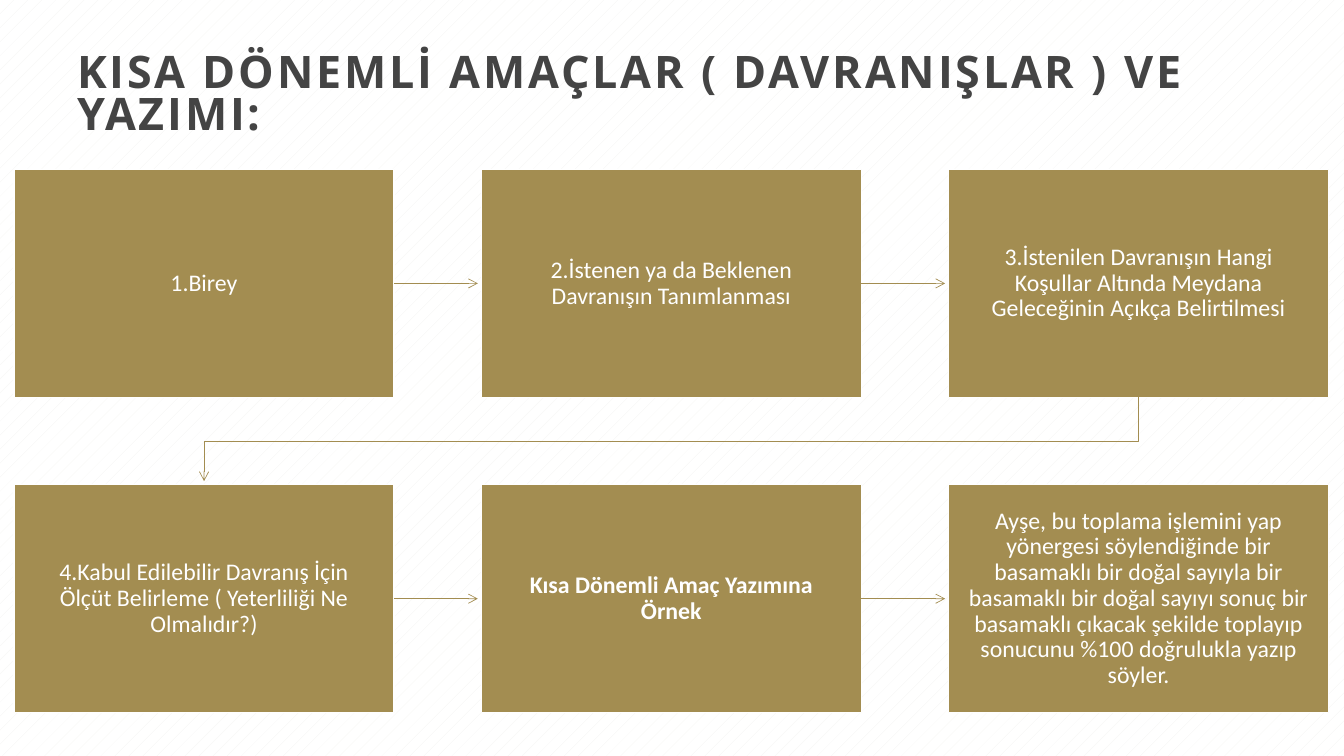
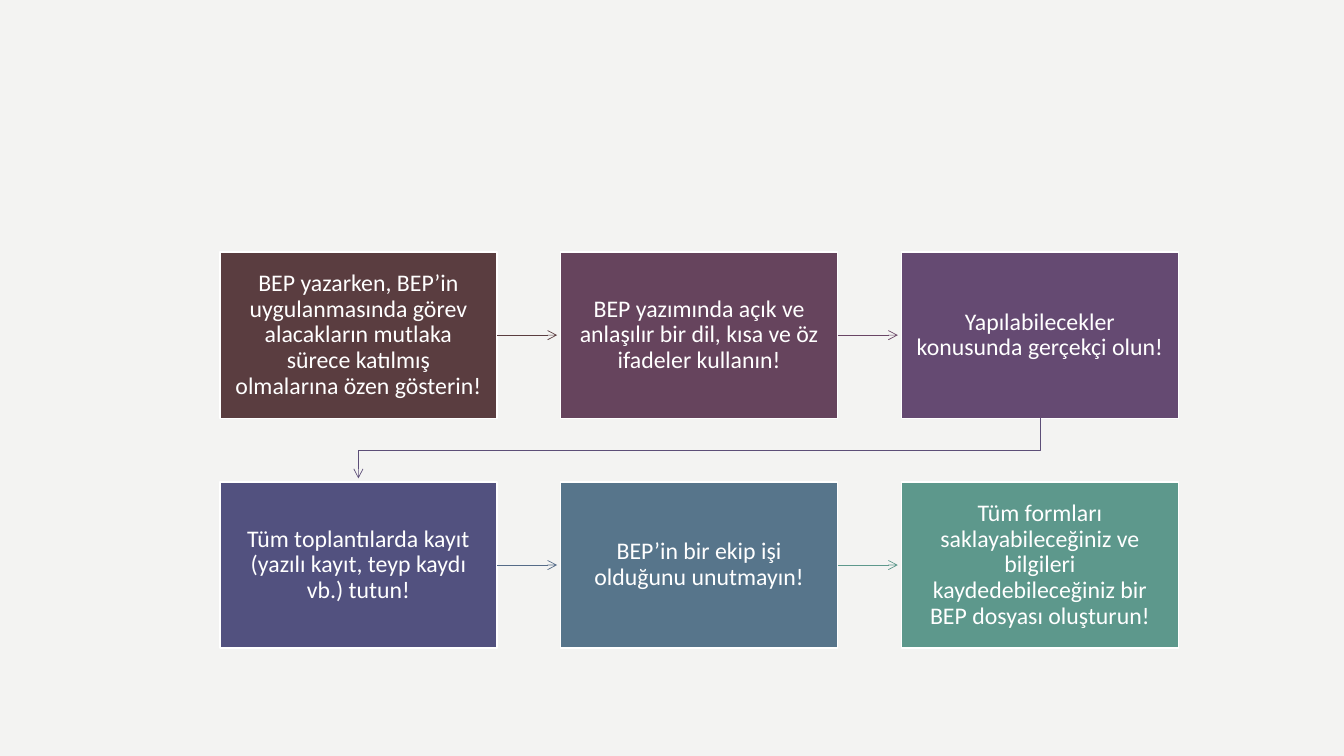
import lxml.etree
import pptx
import pptx.dml.color
import pptx.enum.dml
import pptx.enum.shapes
import pptx.enum.text
import pptx.oxml.ns
import pptx.util

Pt = pptx.util.Pt
RGB = pptx.dml.color.RGBColor
qn = pptx.oxml.ns.qn

# Shared style
WHITE = RGB(0xFF, 0xFF, 0xFF)
PAPER = RGB(0xF3, 0xF3, 0xF2)
TITLE_GREY = RGB(0x44, 0x44, 0x44)
GOLD = RGB(0xA3, 0x8D, 0x51)
BROWN = RGB(0x5A, 0x3D, 0x40)
PLUM = RGB(0x66, 0x44, 0x5D)
MAUVE = RGB(0x69, 0x45, 0x65)
PURPLE = RGB(0x65, 0x4A, 0x72)
VIOLET = RGB(0x5C, 0x4E, 0x78)
INDIGO = RGB(0x52, 0x51, 0x7F)
STEEL = RGB(0x55, 0x6B, 0x88)
SLATE = RGB(0x57, 0x75, 0x8B)
TEAL = RGB(0x5D, 0x98, 0x8C)
TITLE_FONT, BODY_FONT = "Open Sans", "Calibri"
COLUMNS = 3
ARROW_STOP = 2.5  # space between an arrow tip and the next box

# Content: one flow of steps per slide
FLOWS = [
    {
        "title": "KISA DÖNEMLİ AMAÇLAR ( DAVRANIŞLAR ) VE YAZIMI:",
        "patterned": True,
        "left": 10, "top": 121, "width": 271.5, "height": 162.9, "gap": 62.3,
        "insets": (13, 14),
        "steps": [
            "1.Birey",
            "2.İstenen ya da Beklenen Davranışın Tanımlanması",
            "3.İstenilen Davranışın Hangi Koşullar Altında Meydana "
            "Geleceğinin Açıkça Belirtilmesi",
            "4.Kabul Edilebilir Davranış İçin Ölçüt Belirleme "
            "( Yeterliliği Ne Olmalıdır?)",
            "Kısa Dönemli Amaç Yazımına Örnek",
            "Ayşe, bu toplama işlemini yap yönergesi söylendiğinde bir "
            "basamaklı bir doğal sayıyla bir basamaklı bir doğal sayıyı "
            "sonuç bir basamaklı çıkacak şekilde toplayıp sonucunu %100 "
            "doğrulukla yazıp söyler.",
        ],
        "bold_step": 4,
        "fills": [GOLD] * 6,
        "arrows": [GOLD] * 5,
    },
    {
        "title": None,
        "patterned": False,
        "left": 157, "top": 180, "width": 198, "height": 118.8, "gap": 45.4,
        "insets": (9.5, 10),
        "steps": [
            "BEP yazarken, BEP’in uygulanmasında görev alacakların mutlaka "
            "sürece katılmış olmalarına özen gösterin!",
            "BEP yazımında açık ve anlaşılır bir dil, kısa ve öz ifadeler "
            "kullanın!",
            "Yapılabilecekler konusunda gerçekçi olun!",
            "Tüm toplantılarda kayıt (yazılı kayıt, teyp kaydı vb.) tutun!",
            "BEP’in bir ekip işi olduğunu unutmayın!",
            "Tüm formları saklayabileceğiniz ve bilgileri "
            "kaydedebileceğiniz bir BEP dosyası oluşturun!",
        ],
        "bold_step": None,
        "fills": [BROWN, PLUM, PURPLE, INDIGO, SLATE, TEAL],
        "arrows": [BROWN, MAUVE, VIOLET, STEEL, TEAL],
    },
]


def write(shape, text, font, size, color, bold, spacing):
    """Put one paragraph of vertically centred text in a shape."""
    frame = shape.text_frame
    frame.word_wrap = True
    frame.vertical_anchor = pptx.enum.text.MSO_ANCHOR.MIDDLE
    paragraph = frame.paragraphs[0]
    paragraph.line_spacing = spacing
    run = paragraph.add_run()
    run.text = text
    run.font.name = font
    run.font.size = Pt(size)
    run.font.bold = bold
    run.font.color.rgb = color
    return paragraph, run


def add_background(slide, patterned):
    fill = slide.background.fill
    if patterned:
        fill.patterned()
        fill.pattern = pptx.enum.dml.MSO_PATTERN.PERCENT_5
        fill.fore_color.rgb = PAPER
        fill.back_color.rgb = WHITE
    else:
        fill.solid()
        fill.fore_color.rgb = PAPER


def add_title(slide, text):
    title = slide.shapes.add_textbox(Pt(48), Pt(28.8), Pt(846), Pt(77))
    title.text_frame.margin_bottom = 0
    _, run = write(title, text, TITLE_FONT, 32, TITLE_GREY, True, 0.79)
    run._r.get_or_add_rPr().set("spc", "200")


def add_step(slide, flow, index, x, y):
    step = slide.shapes.add_shape(
        pptx.enum.shapes.MSO_SHAPE.RECTANGLE,
        Pt(x), Pt(y), Pt(flow["width"]), Pt(flow["height"]))
    step.shadow.inherit = False
    step.fill.solid()
    step.fill.fore_color.rgb = flow["fills"][index]
    step.line.color.rgb = WHITE
    step.line.width = Pt(1)
    paragraph, _ = write(step, flow["steps"][index], BODY_FONT, 17, WHITE,
                         index == flow["bold_step"], 0.9)
    paragraph.alignment = pptx.enum.text.PP_ALIGN.CENTER
    frame = step.text_frame
    side, end = flow["insets"]
    frame.margin_left = frame.margin_right = Pt(side)
    frame.margin_top = frame.margin_bottom = Pt(end)
    return step


def style_arrow(arrow, color):
    arrow.line.color.rgb = color
    arrow.line.width = Pt(0.5)
    properties = arrow._element.spPr
    lxml.etree.SubElement(properties.find(qn("a:ln")), qn("a:tailEnd"),
                          type="arrow")
    lxml.etree.SubElement(properties, qn("a:effectLst"))


def add_arrow(slide, flow, step, start, following):
    """Lead from a step to the following one, turning at the row end."""
    (x, y), (next_x, next_y) = start, following
    width, height, gap = flow["width"], flow["height"], flow["gap"]
    if y == next_y:
        middle = y + height / 2
        arrow = slide.shapes.add_connector(
            pptx.enum.shapes.MSO_CONNECTOR.STRAIGHT,
            Pt(x + width), Pt(middle), Pt(next_x - ARROW_STOP), Pt(middle))
        arrow.begin_connect(step, 3)
        return arrow
    from_x, to_x = x + width / 2, next_x + width / 2
    turn_y = y + height + gap / 2
    outline = slide.shapes.build_freeform(Pt(from_x), Pt(y + height))
    outline.add_line_segments(
        [(Pt(from_x), Pt(turn_y)), (Pt(to_x), Pt(turn_y)),
         (Pt(to_x), Pt(next_y - ARROW_STOP))], close=False)
    arrow = outline.convert_to_shape()
    arrow.fill.background()
    return arrow


def add_flow(slide, flow):
    places = [
        (flow["left"] + index % COLUMNS * (flow["width"] + flow["gap"]),
         flow["top"] + index // COLUMNS * (flow["height"] + flow["gap"]))
        for index in range(len(flow["steps"]))]
    steps = [add_step(slide, flow, index, x, y)
             for index, (x, y) in enumerate(places)]
    for step, start, following, color in zip(
            steps, places, places[1:], flow["arrows"]):
        style_arrow(add_arrow(slide, flow, step, start, following), color)


def main():
    deck = pptx.Presentation()
    deck.slide_width, deck.slide_height = Pt(960), Pt(540)
    for flow in FLOWS:
        slide = deck.slides.add_slide(deck.slide_layouts[6])
        add_background(slide, flow["patterned"])
        if flow["title"]:
            add_title(slide, flow["title"])
        add_flow(slide, flow)
    deck.save("out.pptx")


if __name__ == "__main__":
    main()
